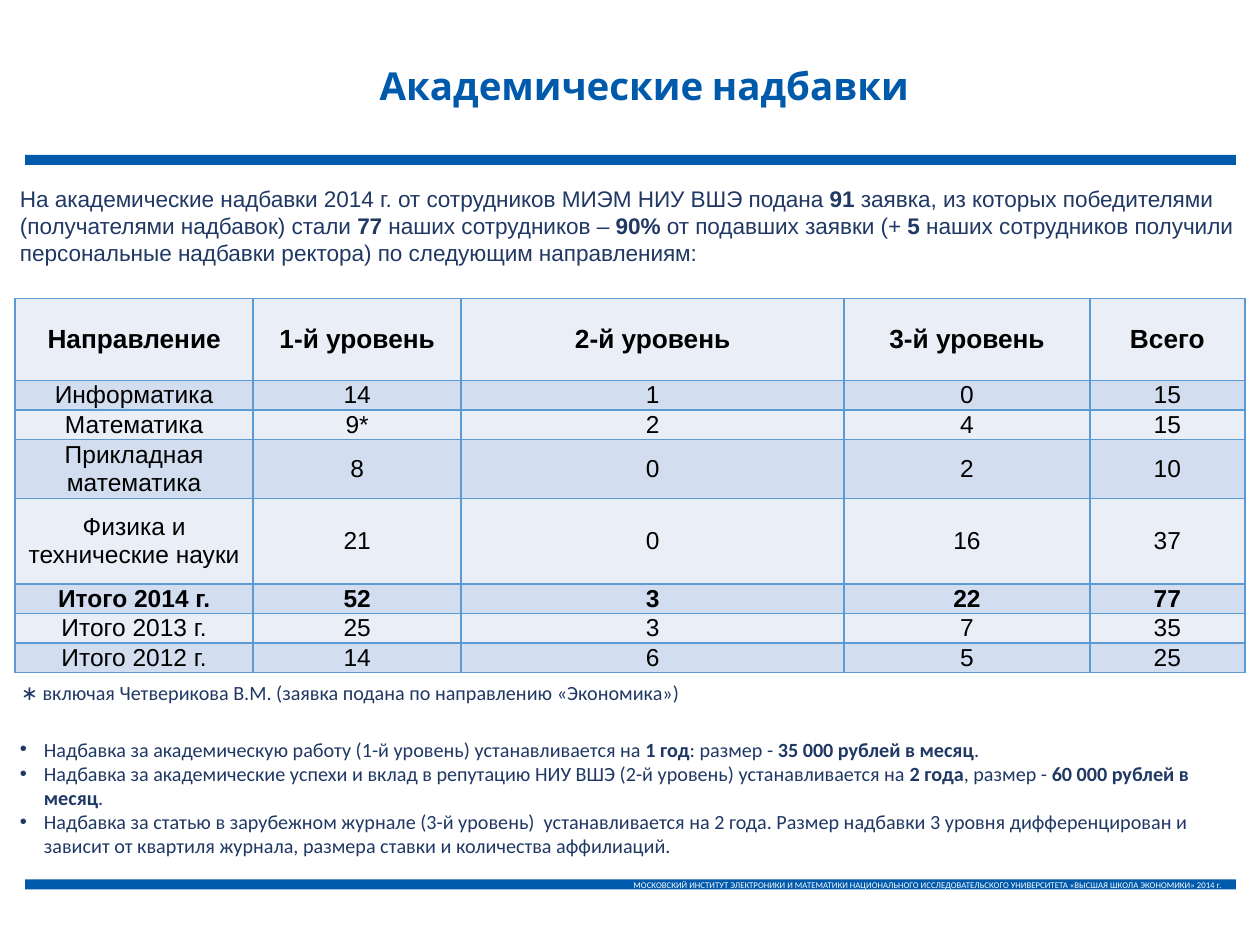
from lxml import etree
from pptx import Presentation
from pptx.dml.color import RGBColor
from pptx.enum.shapes import MSO_SHAPE
from pptx.enum.text import MSO_ANCHOR, MSO_AUTO_SIZE, PP_ALIGN
from pptx.oxml.ns import qn
from pptx.util import Inches, Pt

BLUE = RGBColor(0x00, 0x5A, 0xAB)
NAVY = RGBColor(0x20, 0x38, 0x64)
BLACK = RGBColor(0x00, 0x00, 0x00)
WHITE = RGBColor(0xFF, 0xFF, 0xFF)
GRID = RGBColor(0x5B, 0x9B, 0xD5)
PALE = RGBColor(0xEA, 0xEF, 0xF7)
LIGHT = RGBColor(0xD2, 0xDE, 0xEF)

TITLE = "Академические надбавки"
INTRO = (
    "На академические надбавки 2014 г. от сотрудников МИЭМ НИУ ВШЭ подана **91** заявка, "
    "из которых победителями (получателями надбавок) стали **77** наших сотрудников – **90%** "
    "от подавших заявки (+ **5** наших сотрудников получили персональные надбавки ректора) "
    "по следующим направлениям:"
)
AWARDS = [
    ("Направление", "1-й уровень", "2-й уровень", "3-й уровень", "Всего"),
    ("Информатика", "14", "1", "0", "15"),
    ("Математика", "9*", "2", "4", "15"),
    ("Прикладная\nматематика", "8", "0", "2", "10"),
    ("Физика и технические науки", "21", "0", "16", "37"),
    ("Итого 2014 г.", "52", "3", "22", "77"),
    ("Итого 2013 г.", "25", "3", "7", "35"),
    ("Итого 2012 г.", "14", "6", "5", "25"),
]
COLUMN_WIDTHS = [1.89, 1.65, 3.04, 1.95, 1.23]
ROW_HEIGHTS = [0.65, 0.23, 0.23, 0.46, 0.68, 0.23, 0.23, 0.23]
HEADER_ROW, CURRENT_YEAR_ROW = 0, 5
FOOTNOTE = "∗ включая Четверикова В.М. (заявка подана по направлению «Экономика»)"
RULES = [
    "Надбавка за академическую работу (1-й уровень) устанавливается на **1 год**: "
    "размер - **35 000 рублей в месяц**.",
    "Надбавка за академические успехи и вклад в репутацию НИУ ВШЭ (2-й уровень) "
    "устанавливается на **2 года**, размер - **60 000 рублей в месяц**.",
    "Надбавка за статью в зарубежном журнале (3-й уровень)  устанавливается на 2 года. "
    "Размер надбавки 3 уровня дифференцирован и зависит от квартиля журнала, "
    "размера ставки и количества аффилиаций.",
]
FOOTER = (
    "МОСКОВСКИЙ ИНСТИТУТ ЭЛЕКТРОНИКИ И МАТЕМАТИКИ НАЦИОНАЛЬНОГО ИССЛЕДОВАТЕЛЬСКОГО "
    "УНИВЕРСИТЕТА «ВЫСШАЯ ШКОЛА ЭКОНОМИКИ» 2014 г."
)


class SlideBuilder:
    def __init__(self, presentation):
        self.slide = presentation.slides.add_slide(presentation.slide_layouts[5])

    def style(self, paragraph, size, color, name="Calibri", bold=False, align=PP_ALIGN.LEFT):
        paragraph.alignment = align
        font = paragraph.font
        font.name, font.size, font.bold = name, Pt(size), bold
        font.color.rgb = color

    def title(self, text, left, top, width, height):
        shape = self.slide.shapes.title
        shape.left, shape.top = Inches(left), Inches(top)
        shape.width, shape.height = Inches(width), Inches(height)
        frame = shape.text_frame
        frame.text = text
        frame.auto_size = MSO_AUTO_SIZE.NONE
        frame.vertical_anchor = MSO_ANCHOR.MIDDLE
        self.style(frame.paragraphs[0], 22, BLUE, "Cabin", True, PP_ALIGN.CENTER)

    def bar(self, top, text=""):
        shape = self.slide.shapes.add_shape(
            MSO_SHAPE.RECTANGLE, Inches(0.2), Inches(top), Inches(9.61), Inches(0.08))
        shape.shadow.inherit = False
        shape.fill.solid()
        shape.fill.fore_color.rgb = BLUE
        shape.line.fill.background()
        if text:
            frame = shape.text_frame
            frame.margin_top = frame.margin_bottom = 0
            frame.vertical_anchor = MSO_ANCHOR.MIDDLE
            frame.text = text
            self.style(frame.paragraphs[0], 5, WHITE, align=PP_ALIGN.RIGHT)

    def text(self, texts, left, top, width, height, size, name="Calibri", bullets=False):
        """Add one paragraph per text; parts between ** marks are bold."""
        box = self.slide.shapes.add_textbox(
            Inches(left), Inches(top), Inches(width), Inches(height))
        frame = box.text_frame
        frame.word_wrap = True
        for index, content in enumerate(texts):
            paragraph = frame.add_paragraph() if index else frame.paragraphs[0]
            if bullets:
                self.bullet(paragraph)
            self.style(paragraph, size, NAVY, name)
            for part, words in enumerate(content.split("**")):
                run = paragraph.add_run()
                run.text = words
                if part % 2:
                    run.font.bold = True

    def bullet(self, paragraph):
        properties = paragraph._p.get_or_add_pPr()
        properties.set("marL", str(Inches(0.19)))
        properties.set("indent", str(-Inches(0.19)))
        etree.SubElement(properties, qn("a:buFont"), typeface="Arial")
        etree.SubElement(properties, qn("a:buChar"), char="•")

    def table(self, rows, left, top):
        table = self.slide.shapes.add_table(
            len(rows), len(COLUMN_WIDTHS), Inches(left), Inches(top),
            Inches(sum(COLUMN_WIDTHS)), Inches(sum(ROW_HEIGHTS))).table
        for column, width in zip(table.columns, COLUMN_WIDTHS):
            column.width = Inches(width)
        for row, height in zip(table.rows, ROW_HEIGHTS):
            row.height = Inches(height)
        for row_index, values in enumerate(rows):
            size = 15 if row_index == HEADER_ROW else 14
            bold = row_index in (HEADER_ROW, CURRENT_YEAR_ROW)
            for column_index, value in enumerate(values):
                cell = table.cell(row_index, column_index)
                cell.text = value
                cell.margin_left = cell.margin_right = Inches(0.01)
                cell.margin_top = cell.margin_bottom = 0
                cell.vertical_anchor = MSO_ANCHOR.MIDDLE
                self.borders(cell)
                cell.fill.solid()
                cell.fill.fore_color.rgb = LIGHT if row_index % 2 else PALE
                for paragraph in cell.text_frame.paragraphs:
                    self.style(paragraph, size, BLACK, "Arial", bold, PP_ALIGN.CENTER)

    def borders(self, cell):
        properties = cell._tc.get_or_add_tcPr()
        for side in ("a:lnL", "a:lnR", "a:lnT", "a:lnB"):
            line = etree.SubElement(properties, qn(side), w=str(Pt(1)))
            fill = etree.SubElement(line, qn("a:solidFill"))
            etree.SubElement(fill, qn("a:srgbClr"), val=str(GRID))


def main():
    presentation = Presentation()
    presentation.slide_width, presentation.slide_height = Inches(10), Inches(7.5)
    builder = SlideBuilder(presentation)
    builder.bar(1.23)
    builder.bar(6.98, FOOTER)
    builder.title(TITLE, 1.53, 0.44, 7.17, 0.47)
    builder.text([INTRO], 0.06, 1.42, 9.89, 0.75, 12.9, "Arial")
    builder.table(AWARDS, 0.12, 2.37)
    builder.text([FOOTNOTE], 0.07, 5.35, 5.59, 0.3, 11.5)
    builder.text(RULES, 0.06, 5.8, 9.89, 1.07, 11.5, bullets=True)
    presentation.save("out.pptx")


if __name__ == "__main__":
    main()
